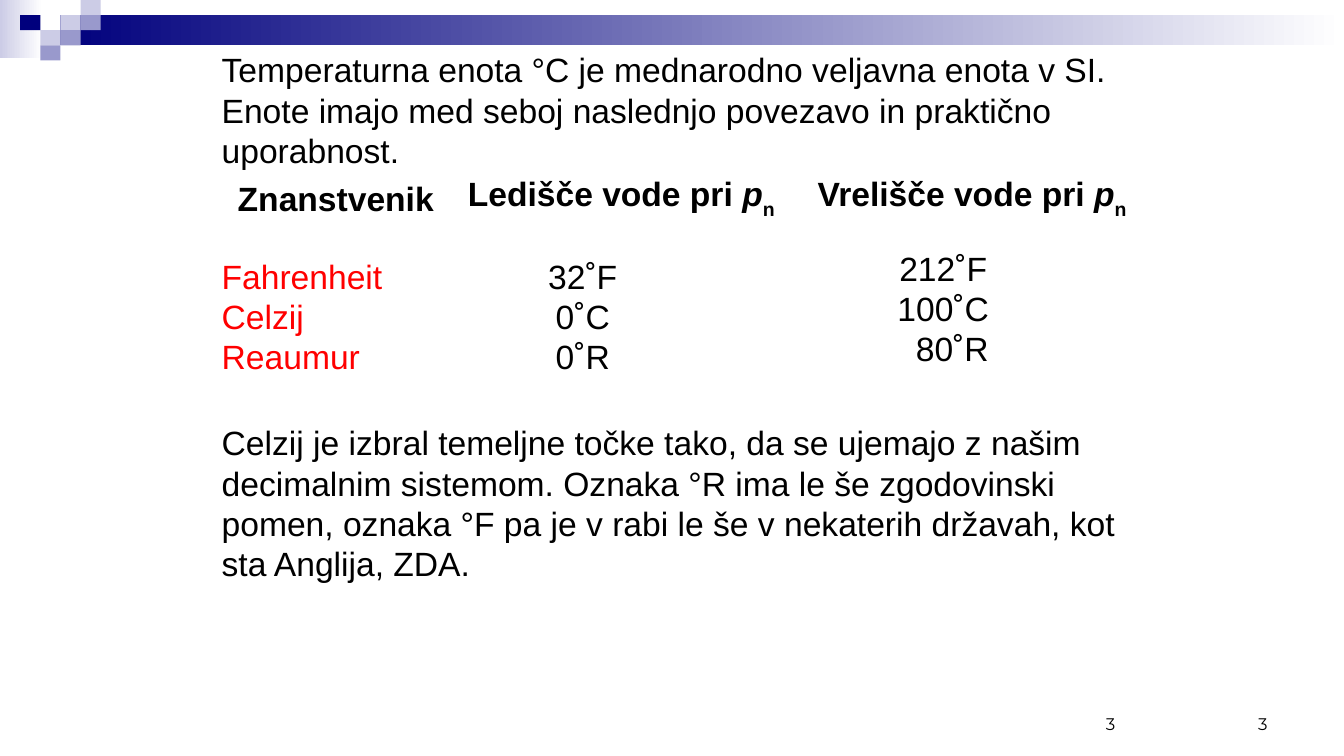
from dataclasses import dataclass

from pptx import Presentation
from pptx.dml.color import RGBColor
from pptx.enum.shapes import MSO_SHAPE
from pptx.enum.text import MSO_ANCHOR, PP_ALIGN
from pptx.util import Emu, Pt

PX = 9144  # 100 px to the inch
BLANK_LAYOUT = 6
RECT = MSO_SHAPE.RECTANGLE
TOP, MIDDLE, BOTTOM = MSO_ANCHOR.TOP, MSO_ANCHOR.MIDDLE, MSO_ANCHOR.BOTTOM
LEFT, CENTER, RIGHT = PP_ALIGN.LEFT, PP_ALIGN.CENTER, PP_ALIGN.RIGHT


@dataclass(frozen=True)
class Theme:
    navy: str = "00007D"
    violet: str = "9999CC"
    pale: str = "CCCCE6"
    white: str = "FFFFFF"
    ink: str = "000000"
    red: str = "FF0000"
    body_font: str = "Arial"
    number_font: str = "Montserrat"
    body_size: int = 24
    number_size: int = 12


THEME = Theme()


@dataclass(frozen=True)
class Box:
    x: int
    y: int
    w: int
    h: int


@dataclass(frozen=True)
class Block:
    box: Box
    color: str
    fade_to: str = ""


@dataclass(frozen=True)
class Label:
    box: Box
    text: str
    font: str = THEME.body_font
    size: int = THEME.body_size
    color: str = THEME.ink
    bold: bool = False
    align: PP_ALIGN = LEFT
    anchor: MSO_ANCHOR = MIDDLE
    wrap: bool = True
    indents: tuple[int, ...] = ()  # first-line indent of each paragraph


@dataclass(frozen=True)
class Heading:
    box: Box
    text: str


# Header decoration: two fading bars and a mosaic of small tiles
BLOCKS = [
    Block(Box(0, 0, 42, 58), THEME.pale, THEME.white),
    Block(Box(60, 15, 1273, 30), THEME.navy, THEME.white),
] + [
    Block(Box(col * 20, row * 15, 20, 15), color)
    for col, row, color in [
        (3, 1, THEME.pale), (4, 0, THEME.pale), (4, 1, THEME.violet),
        (2, 2, THEME.pale), (1, 1, THEME.navy), (3, 2, THEME.violet),
        (2, 3, THEME.violet),
    ]
]

LABELS = [
    Label(Box(210, 44, 921, 131),
          "Temperaturna enota °C je mednarodno veljavna enota v SI. Enote imajo "
          "med seboj naslednjo povezavo in praktično uporabnost.", anchor=TOP),
    Label(Box(226, 172, 224, 50), "Znanstvenik", bold=True, wrap=False),
    Label(Box(210, 248, 181, 131), "Fahrenheit\nCelzij\nReaumur",
          color=THEME.red, wrap=False),
    Label(Box(516, 248, 107, 131), "32˚F\n0˚C\n0˚R", align=CENTER, wrap=False,
          indents=(17, 17, 17)),
    Label(Box(862, 240, 130, 131), "212˚F\n100˚C\n80˚R", align=CENTER, wrap=False,
          indents=(17, 17, 35)),
    Label(Box(210, 413, 929, 172),
          "Celzij je izbral temeljne točke tako, da se ujemajo z našim decimalnim "
          "sistemom. Oznaka °R ima le še zgodovinski pomen, oznaka °F pa je v rabi "
          "le še v nekaterih državah, kot sta Anglija, ZDA."),
] + [
    Label(box, "3", font=THEME.number_font, size=THEME.number_size,
          align=RIGHT, anchor=BOTTOM)
    for box in (Box(956, 683, 311, 50), Box(883, 683, 233, 50))
]

HEADINGS = [
    Heading(Box(454, 170, 331, 50), "Ledišče vode pri "),
    Heading(Box(801, 170, 366, 50), "Vrelišče vode pri "),
]


def place(box: Box) -> tuple[Emu, ...]:
    return tuple(Emu(v * PX) for v in (box.x, box.y, box.w, box.h))


def rgb(color: str) -> RGBColor:
    return RGBColor.from_string(color)


def style_run(r, font: str, size: int, color: str, bold: bool) -> None:
    r.font.name = font
    r.font.size = Pt(size)
    r.font.color.rgb = rgb(color)
    r.font.bold = bold


def draw_block(s, block: Block) -> None:
    sp = s.shapes.add_shape(RECT, *place(block.box))
    sp.shadow.inherit = False
    sp.line.fill.background()
    if block.fade_to:
        sp.fill.gradient()
        sp.fill.gradient_angle = 0
        for stop, color, position in zip(sp.fill.gradient_stops,
                                         (block.color, block.fade_to), (0, 1)):
            stop.color.rgb = rgb(color)
            stop.position = position
    else:
        sp.fill.solid()
        sp.fill.fore_color.rgb = rgb(block.color)


def draw_label(s, label: Label) -> None:
    tf = s.shapes.add_textbox(*place(label.box)).text_frame
    tf.word_wrap = label.wrap
    tf.vertical_anchor = label.anchor
    tf.text = label.text
    for p in tf.paragraphs:
        p.alignment = label.align
        for r in p.runs:
            style_run(r, label.font, label.size, label.color, label.bold)
    for p, indent in zip(tf.paragraphs, label.indents):
        p_pr = p._p.get_or_add_pPr()
        p_pr.set("marL", "0")
        p_pr.set("indent", str(indent * PX))


def draw_heading(s, heading: Heading) -> None:
    table = s.shapes.add_table(1, 1, *place(heading.box)).table
    table.first_row = False
    table.horz_banding = False
    cell = table.cell(0, 0)
    cell.fill.background()
    p = cell.text_frame.paragraphs[0]
    for text in (heading.text, "p", "n"):
        r = p.add_run()
        r.text = text
        style_run(r, THEME.body_font, THEME.body_size, THEME.ink, True)
    symbol, subscript = p.runs[1:]
    symbol.font.italic = True
    subscript._r.get_or_add_rPr().set("baseline", "-30000")


def main() -> None:
    prs = Presentation()
    prs.slide_width, prs.slide_height = Emu(1333 * PX), Emu(750 * PX)
    s = prs.slides.add_slide(prs.slide_layouts[BLANK_LAYOUT])
    for block in BLOCKS:
        draw_block(s, block)
    for heading in HEADINGS:
        draw_heading(s, heading)
    for label in LABELS:
        draw_label(s, label)
    prs.save("out.pptx")


if __name__ == "__main__":
    main()
